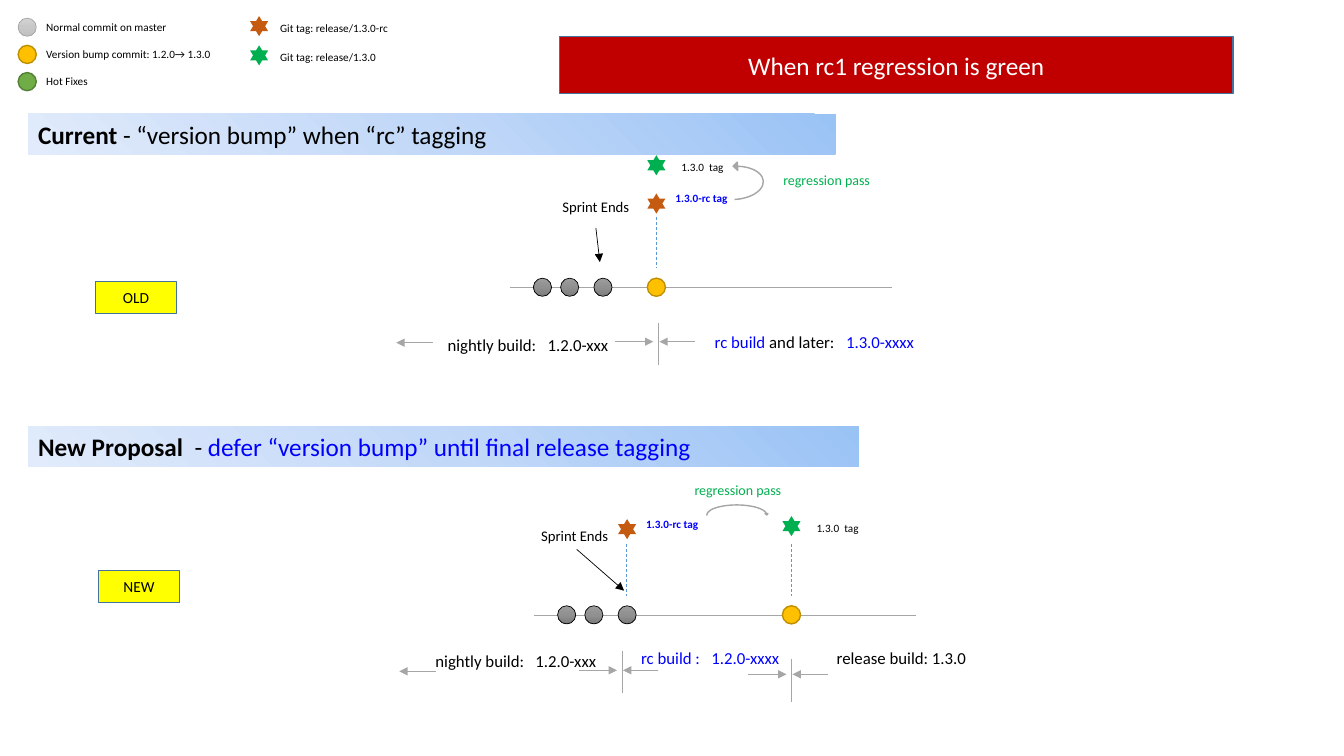
from copy import deepcopy

from pptx import Presentation
from pptx import util as u
from pptx.dml.color import RGBColor
from pptx.enum import dml, shapes, text
from pptx.oxml import ns, parse_xml

BLACK = RGBColor(0x00, 0x00, 0x00)
WHITE = RGBColor(0xFF, 0xFF, 0xFF)
BLUE = RGBColor(0x00, 0x00, 0xFF)
GREEN = RGBColor(0x00, 0xB0, 0x50)
RUST = RGBColor(0xC5, 0x5A, 0x11)
AMBER = RGBColor(0xFF, 0xC0, 0x00)
AMBER_EDGE = RGBColor(0xBD, 0x8E, 0x00)
LEAF = RGBColor(0x70, 0xAD, 0x47)
LEAF_EDGE = RGBColor(0x53, 0x80, 0x35)
RED = RGBColor(0xC0, 0x00, 0x00)
YELLOW = RGBColor(0xFF, 0xFF, 0x00)
BOX_EDGE = RGBColor(0x43, 0x73, 0x9E)
GREY = RGBColor(0xA6, 0xA6, 0xA6)
PALE_EDGE = RGBColor(0xA5, 0xA5, 0xA5)
DASH_BLUE = RGBColor(0x5B, 0x9B, 0xD5)
# Three-stop gradients
PALE_GREY = [RGBColor(0xD2, 0xD2, 0xD2), RGBColor(0xC8, 0xC8, 0xC8), RGBColor(0xC0, 0xC0, 0xC0)]
DARK_GREY = [RGBColor(0x9D, 0x9D, 0x9D), RGBColor(0x90, 0x90, 0x90), RGBColor(0x7C, 0x7C, 0x7C)]
SKY = [RGBColor(0x9A, 0xC3, 0xF5), RGBColor(0xC2, 0xD8, 0xF8), RGBColor(0xE1, 0xEB, 0xFB)]

SHAPE = shapes.MSO_SHAPE
DOT = 0.18
GROWING = {"word_wrap": True, "auto_size": text.MSO_AUTO_SIZE.SHAPE_TO_FIT_TEXT,
           "vertical_anchor": text.MSO_ANCHOR.TOP}
CENTRED = {"word_wrap": True, "vertical_anchor": text.MSO_ANCHOR.MIDDLE}


def write(frame, runs, size, layout=GROWING, align=text.PP_ALIGN.LEFT):
    """Each run is (wording, colour, bold)."""
    for name, value in layout.items():
        setattr(frame, name, value)
    paragraph = frame.paragraphs[0]
    paragraph.alignment = align
    for wording, colour, bold in runs:
        run = paragraph.add_run()
        run.text = wording
        run.font.color.rgb = colour
        for name, value in {"name": "Calibri", "size": u.Pt(size), "bold": bold}.items():
            setattr(run.font, name, value)


def label(slide, left, top, width, height, runs, size):
    box = slide.shapes.add_textbox(*map(u.Inches, (left, top, width, height)))
    write(box.text_frame, runs, size)


def figure(slide, preset, box, fill, edge=None, weight=1.0, angle=270):
    shape = slide.shapes.add_shape(preset, *map(u.Inches, box))
    shape.shadow.inherit = False
    if isinstance(fill, list):
        shape.fill.gradient()
        shape.fill.gradient_angle = angle
        stop_list = shape.element.spPr.find(".//" + ns.qn("a:gsLst"))
        stop_list.insert(1, deepcopy(stop_list[0]))
        for stop, colour, position in zip(shape.fill.gradient_stops, fill, (0, 0.5, 1)):
            stop.color.rgb = colour
            stop.position = position
    else:
        shape.fill.solid()
        shape.fill.fore_color.rgb = fill
    if edge is None:
        shape.line.fill.background()
    else:
        shape.line.color.rgb = edge
        shape.line.width = u.Pt(weight)
    return shape


def rule(slide, start, end, colour=GREY, arrow=False, dashed=False):
    line = slide.shapes.add_connector(shapes.MSO_CONNECTOR.STRAIGHT, *map(u.Inches, start + end))
    line.line.color.rgb = colour
    line.line.width = u.Pt(0.5)
    if dashed:
        line.line.dash_style = dml.MSO_LINE.DASH
    if arrow:
        line.line.fill  # the outline element already exists here
        outline = line.element.spPr.find(ns.qn("a:ln"))
        outline.append(parse_xml(f'<a:tailEnd {ns.nsdecls("a")} type="triangle"/>'))
    line.element.spPr.append(parse_xml(f'<a:effectLst {ns.nsdecls("a")}/>'))


def legend(slide, left, top):
    dots = [("Normal commit on master", PALE_GREY, PALE_EDGE, 0.5),
            ("Version bump commit: 1.2.0→ 1.3.0", AMBER, AMBER_EDGE, 1),
            ("Hot Fixes", LEAF, LEAF_EDGE, 1)]
    for row, (wording, fill, edge, weight) in enumerate(dots):
        y = top + 0.27 * row
        figure(slide, SHAPE.OVAL, (left, y, DOT, DOT), fill, edge, weight)
        label(slide, left + 0.18, y - 0.03, 2.02, 0.24, [(wording, BLACK, False)], 8)
    stars = [("Git tag: release/1.3.0-rc", RUST), ("Git tag: release/1.3.0", GREEN)]
    for row, (wording, fill) in enumerate(stars):
        y = top - 0.02 + 0.29 * row
        figure(slide, SHAPE.STAR_6_POINT, (left + 2.3, y, DOT, 0.2), fill)
        label(slide, left + 2.5, y, 2.02, 0.24, [(wording, BLACK, False)], 8)


def heading(slide, left, top, width, runs):
    bar = figure(slide, SHAPE.RECTANGLE, (left, top, width, 0.4), SKY, angle=225)
    write(bar.text_frame, runs, 18)


def plate(slide, box, fill, wording, colour, size):
    shape = figure(slide, SHAPE.RECTANGLE, box, fill, BOX_EDGE)
    write(shape.text_frame, [(wording, colour, False)], size, CENTRED, text.PP_ALIGN.CENTER)


def commits(slide, left, axis, bump):
    """Branch line with three nightly commits and the version bump."""
    rule(slide, (left, axis), (left + 3.79, axis))
    for x in (0.23, 0.5, 0.83):
        figure(slide, SHAPE.OVAL, (left + x, axis - DOT / 2, DOT, DOT), DARK_GREY, BLACK, 0.5)
    figure(slide, SHAPE.OVAL, (left + bump, axis - DOT / 2, DOT, DOT), AMBER, AMBER_EDGE)


def rc_tag(slide, left, top):
    figure(slide, SHAPE.STAR_6_POINT, (left, top, DOT, 0.2), RUST)
    label(slide, left + 0.18, top - 0.07, 2.02, 0.24, [("1.3.0-rc tag", BLUE, True)], 8)


def release_tag(slide, left, top):
    figure(slide, SHAPE.STAR_6_POINT, (left, top, DOT, 0.2), GREEN)
    label(slide, left + 0.24, top, 2.02, 0.24, [("1.3.0  tag", BLACK, False)], 8)


def tag_drop(slide, x, axis):
    rule(slide, (x, axis - 0.7), (x, axis - 0.19), DASH_BLUE, dashed=True)


def boundary(slide, x, top, arrows):
    """Build-range divider with an arrow from either side."""
    rule(slide, (x, top), (x, top + 0.42 if arrows < 0.2 else top + 0.35))
    y = top + arrows
    rule(slide, (x - 0.43, y), (x - 0.05, y), arrow=True)
    rule(slide, (x + 0.36, y), (x + 0.01, y), arrow=True)


def sprint_end(slide, left, top, start, end):
    label(slide, left, top, 1.26, 0.29, [("Sprint Ends", BLACK, False)], 10.5)
    rule(slide, start, end, BLACK, arrow=True)


def nightly(slide, left, top, arrow_x, arrow_y):
    label(slide, left, top, 1.81, 0.3, [("nightly build:   1.2.0-xxx", BLACK, False)], 12)
    rule(slide, (arrow_x, arrow_y), (arrow_x - 0.36, arrow_y), arrow=True)


def regression(slide, left, top, arc, rotation=0, flipped=False):
    arrow = figure(slide, SHAPE.CURVED_UP_ARROW, arc, GREY, GREY)
    for index, value in enumerate((0, 0.279, 0.149)):
        arrow.adjustments[index] = value
    arrow.rotation = rotation
    if flipped:
        arrow.element.spPr.xfrm.set("flipV", "1")
    label(slide, left, top, 1.41, 0.27, [("regression pass", GREEN, False)], 10)


def current_flow(slide, left, axis):
    commits(slide, left, axis, 1.36)
    tag_drop(slide, left + 1.45, axis)
    rc_tag(slide, left + 1.36, axis - 0.93)
    release_tag(slide, left + 1.36, axis - 1.31)
    regression(slide, left + 2.61, axis - 1.2, (left + 2.18, axis - 1.21, 0.37, 0.29), 266.6)
    sprint_end(slide, left + 0.42, axis - 0.94,
               (left + 0.85, axis - 0.59), (left + 0.89, axis - 0.25))
    nightly(slide, left - 0.72, axis + 0.42, left - 0.77, axis + 0.55)
    boundary(slide, left + 1.47, axis + 0.35, 0.19)
    label(slide, left + 1.93, axis + 0.39, 2.69, 0.3,
          [("rc build ", BLUE, False), ("and later:   ", BLACK, False),
           ("1.3.0-xxxx", BLUE, False)], 12)


def proposed_flow(slide, left, axis):
    commits(slide, left, axis, 2.46)
    for x in (0.91, 2.55):
        tag_drop(slide, left + x, axis)
    rc_tag(slide, left + 0.83, axis - 0.95)
    release_tag(slide, left + 2.46, axis - 0.98)
    regression(slide, left + 1.49, axis - 1.37, (left + 1.71, axis - 1.09, 0.61, 0.1), flipped=True)
    sprint_end(slide, left - 0.03, axis - 0.92,
               (left + 0.42, axis - 0.65), (left + 0.89, axis - 0.24))
    nightly(slide, left - 1.08, axis + 0.31, left - 0.98, axis + 0.56)
    boundary(slide, left + 0.87, axis + 0.36, 0.19)
    boundary(slide, left + 2.55, axis + 0.44, 0.15)
    for x, wording, colour in ((0.96, "rc build :   1.2.0-xxxx", BLUE),
                               (2.9, "release build: 1.3.0", BLACK)):
        label(slide, left + x, axis + 0.28, 2.69, 0.3, [(wording, colour, False)], 12)


def main():
    deck = Presentation()
    deck.slide_width, deck.slide_height = u.Inches(13.33), u.Inches(7.5)
    slide = deck.slides.add_slide(deck.slide_layouts[6])
    # Legend and banner
    legend(slide, 0.18, 0.18)
    plate(slide, (5.55, 0.36, 6.68, 0.57), RED, "When rc1 regression is green", WHITE, 18)
    # Current process
    heading(slide, 0.28, 1.13, 8.01,
            [("Current ", BLACK, True), ("- “version bump” when “rc” tagging", BLACK, False)])
    plate(slide, (0.95, 2.79, 0.8, 0.32), YELLOW, "OLD", BLACK, 11)
    current_flow(slide, 5.06, 2.85)
    # Proposed process
    heading(slide, 0.28, 4.23, 8.24,
            [("New Proposal  ", BLACK, True), ("- ", BLACK, False),
             ("defer “version bump” until final release tagging", BLUE, False)])
    plate(slide, (0.98, 5.66, 0.8, 0.32), YELLOW, "NEW", BLACK, 11)
    proposed_flow(slide, 5.3, 6.1)
    deck.save("out.pptx")


if __name__ == "__main__":
    main()
